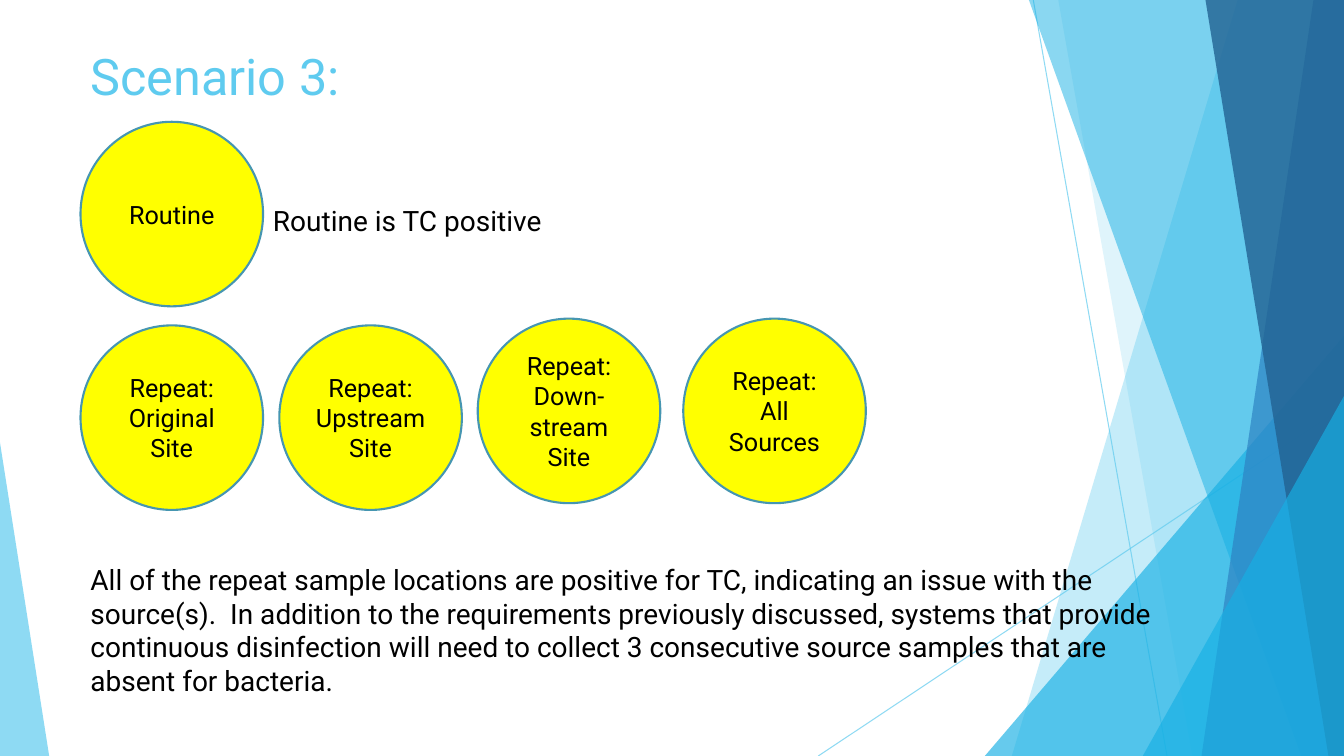
from dataclasses import dataclass

from lxml import etree
from pptx import Presentation
from pptx.dml.color import RGBColor
from pptx.enum.shapes import MSO_CONNECTOR, MSO_SHAPE
from pptx.enum.text import MSO_ANCHOR, PP_ALIGN
from pptx.oxml.ns import qn
from pptx.shapes.autoshape import Shape
from pptx.slide import Slide
from pptx.text.text import TextFrame
from pptx.util import Cm, Pt

STRAIGHT = MSO_CONNECTOR.STRAIGHT
TRIANGLE = MSO_SHAPE.ISOSCELES_TRIANGLE
SAMPLE_CIRCLE = MSO_SHAPE.FLOWCHART_CONNECTOR
MIDDLE, TOP = MSO_ANCHOR.MIDDLE, MSO_ANCHOR.TOP
CENTER, LEFT = PP_ALIGN.CENTER, PP_ALIGN.LEFT

FONT = "Roboto"
COLORS = {
    "sky": "5FCBEF",
    "cyan": "17B0E4",
    "blue": "2E83C3",
    "navy": "226292",
    "yellow": "FFFF00",
    "outline": "4696B1",
    "black": "000000",
}
WIDTH, HEIGHT = 33.87, 19.05
MARGIN = 2.03
CIRCLE_WIDTH, CIRCLE_HEIGHT = 4.6, 4.65


@dataclass(frozen=True)
class Ray:
    start: tuple[float, float]
    end: tuple[float, float]


@dataclass(frozen=True)
class Panel:
    """Full-height facet with a slanted left edge, reaching the right slide edge."""
    top_x: float
    bottom_x: float
    color: str
    opacity: int


@dataclass(frozen=True)
class Corner:
    """Right triangle standing on the bottom edge; apex 0 is left, 1 is right."""
    left: float
    top: float
    width: float
    apex: int
    color: str
    opacity: int


@dataclass(frozen=True)
class Sample:
    left: float
    top: float
    label: str


@dataclass(frozen=True)
class Passage:
    left: float
    top: float
    width: float
    height: float
    text: str
    size: int
    color: str = "black"


RAYS = (
    Ray((26.04, 0), (29.41, HEIGHT)),
    Ray((WIDTH, 10.24), (20.62, HEIGHT)),
)
FACETS = (
    Panel(31.19, 25.5, "sky", 36),
    Panel(26.67, 30.05, "sky", 20),
    Corner(24.82, 8.46, WIDTH - 24.82, 1, "cyan", 66),
    Panel(25.93, 32.79, "cyan", 50),
    Panel(33.1, 30.28, "blue", 70),
    Panel(30.38, 33.48, "navy", 80),
    Corner(28.8, 9.98, WIDTH - 28.8, 1, "cyan", 66),
    Corner(0, 11.15, 1.24, 0, "sky", 70),
)
SAMPLES = (
    Sample(MARGIN, 3.07, "Routine"),
    Sample(MARGIN, 8.2, "Repeat:\nOriginal Site"),
    Sample(7.04, 8.2, "Repeat:\nUpstream Site"),
    Sample(12.04, 8.03, "Repeat:\nDown-stream Site"),
    Sample(17.22, 8.03, "Repeat:\nAll Sources"),
)
PASSAGES = (
    Passage(MARGIN, 1.02, 23.88, 2.03, "Scenario 3:", 36, "sky"),
    Passage(6.63, 5, 23.88, 1.22, "Routine is TC positive", 20),
    Passage(
        MARGIN, 14.05, 27.66, 3.33,
        "All of the repeat sample locations are positive for TC, indicating "
        "an issue with the source(s).  In addition to the requirements "
        "previously discussed, systems that provide continuous disinfection "
        "will need to collect 3 consecutive source samples that are absent "
        "for bacteria.",
        20,
    ),
)


def rgb(name: str) -> RGBColor:
    return RGBColor.from_string(COLORS[name])


def set_opacity(properties: etree._Element, percent: int) -> None:
    """Add alpha to the first solid colour found in the shape properties."""
    color = next(properties.iter(qn("a:srgbClr")))
    etree.SubElement(color, qn("a:alpha")).set("val", str(percent * 1000))


def write(frame: TextFrame, text: str, size: int, color: str,
          align: PP_ALIGN, anchor: MSO_ANCHOR) -> None:
    frame.text = text
    frame.word_wrap = True
    frame.vertical_anchor = anchor
    for paragraph in frame.paragraphs:
        paragraph.alignment = align
        for run in paragraph.runs:
            run.font.name = FONT
            run.font.size = Pt(size)
            run.font.color.rgb = rgb(color)


def draw_ray(slide: Slide, ray: Ray) -> None:
    line = slide.shapes.add_connector(
        STRAIGHT, *(Cm(value) for value in ray.start + ray.end))
    line.line.color.rgb = rgb("sky")
    line.line.width = Pt(0.75)
    properties = line._element.spPr
    set_opacity(properties, 70)
    etree.SubElement(properties, qn("a:effectLst"))


def add_panel(slide: Slide, panel: Panel) -> Shape:
    builder = slide.shapes.build_freeform(Cm(panel.top_x), 0, scale=1.0)
    builder.add_line_segments([
        (Cm(WIDTH), 0),
        (Cm(WIDTH), Cm(HEIGHT)),
        (Cm(panel.bottom_x), Cm(HEIGHT)),
    ])
    return builder.convert_to_shape()


def add_corner(slide: Slide, corner: Corner) -> Shape:
    triangle = slide.shapes.add_shape(
        TRIANGLE, Cm(corner.left), Cm(corner.top),
        Cm(corner.width), Cm(HEIGHT - corner.top))
    triangle.adjustments[0] = corner.apex
    return triangle


def draw_facet(slide: Slide, facet: Panel | Corner) -> None:
    add = add_panel if isinstance(facet, Panel) else add_corner
    shape = add(slide, facet)
    shape.shadow.inherit = False
    shape.fill.solid()
    shape.fill.fore_color.rgb = rgb(facet.color)
    set_opacity(shape._element.spPr, facet.opacity)
    shape.line.fill.background()


def draw_sample(slide: Slide, sample: Sample) -> None:
    circle = slide.shapes.add_shape(
        SAMPLE_CIRCLE, Cm(sample.left), Cm(sample.top),
        Cm(CIRCLE_WIDTH), Cm(CIRCLE_HEIGHT))
    circle.shadow.inherit = False
    circle.fill.solid()
    circle.fill.fore_color.rgb = rgb("yellow")
    circle.line.color.rgb = rgb("outline")
    circle.line.width = Pt(1.5)
    write(circle.text_frame, sample.label, 18, "black", CENTER, MIDDLE)


def draw_passage(slide: Slide, passage: Passage) -> None:
    box = slide.shapes.add_textbox(
        Cm(passage.left), Cm(passage.top), Cm(passage.width), Cm(passage.height))
    write(box.text_frame, passage.text, passage.size, passage.color, LEFT, TOP)


def main() -> None:
    deck = Presentation()
    deck.slide_width, deck.slide_height = Cm(WIDTH), Cm(HEIGHT)
    slide = deck.slides.add_slide(deck.slide_layouts[6])
    for ray in RAYS:
        draw_ray(slide, ray)
    for facet in FACETS:
        draw_facet(slide, facet)
    for sample in SAMPLES:
        draw_sample(slide, sample)
    for passage in PASSAGES:
        draw_passage(slide, passage)
    deck.save("out.pptx")


if __name__ == "__main__":
    main()
